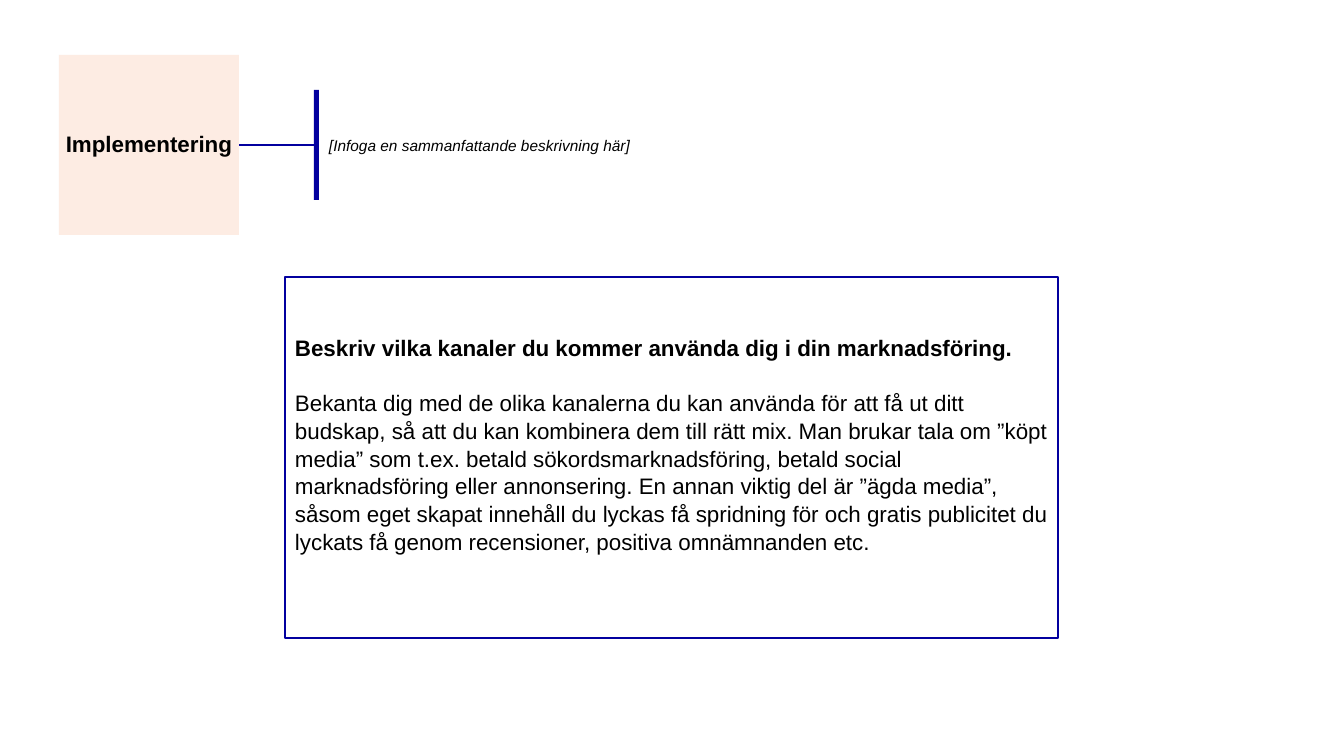
import pptx
import pptx.util
import pptx.oxml
from pptx.dml.color import RGBColor
from pptx.enum.shapes import MSO_CONNECTOR, MSO_SHAPE
from pptx.enum.text import MSO_ANCHOR, PP_ALIGN

NAVY = RGBColor(0x03, 0x00, 0x9F)
PEACH = RGBColor(0xFD, 0xEC, 0xE3)
BLACK = RGBColor(0, 0, 0)

INSET = 10
LINE_HEIGHT = 27

HEADING = "Beskriv vilka kanaler du kommer använda dig i din marknadsföring."
BODY = (
    "Bekanta dig med de olika kanalerna du kan använda för att få ut ditt budskap, "
    "så att du kan kombinera dem till rätt mix. Man brukar tala om ”köpt media” som "
    "t.ex. betald sökordsmarknadsföring, betald social marknadsföring eller "
    "annonsering. En annan viktig del är ”ägda media”, såsom eget skapat innehåll du "
    "lyckas få spridning för och gratis publicitet du lyckats få genom recensioner, "
    "positiva omnämnanden etc."
)


def px(n):
    """Convert slide pixels (1344 across 13.33 inches) to EMU."""
    return pptx.util.Emu(round(n * 914400 / 100.8))


def add_rect(slide, x, y, w, h, fill=None, line=None):
    sp = slide.shapes.add_shape(MSO_SHAPE.RECTANGLE, px(x), px(y), px(w), px(h))
    sp.shadow.inherit = False
    if fill is None:
        sp.fill.background()
    else:
        sp.fill.solid()
        sp.fill.fore_color.rgb = fill
    if line is None:
        sp.line.fill.background()
    else:
        sp.line.color.rgb = line
        sp.line.width = pptx.util.Pt(1)
    return sp


def set_frame(sp, left=INSET, right=INSET, top=5, bottom=5):
    tf = sp.text_frame
    tf.word_wrap = True
    tf.vertical_anchor = MSO_ANCHOR.MIDDLE
    tf.margin_left, tf.margin_right = px(left), px(right)
    tf.margin_top, tf.margin_bottom = px(top), px(bottom)
    return tf


def write(p, text, size=16, bold=False, italic=False, align=PP_ALIGN.LEFT,
          spacing=1.0, after=0):
    p.alignment = align
    p.line_spacing = spacing
    p.space_after = px(after)
    r = p.add_run()
    r.text = text
    r.font.name = "Arial"
    r.font.size = pptx.util.Pt(size)
    r.font.bold = bold
    r.font.italic = italic
    r.font.color.rgb = BLACK


def add_header(slide, x, y, side):
    """Draw the square label, its connector, the bar and the summary."""
    middle = y + side / 2
    bar_x, bar_w, bar_h = x + side + 75, 5, 110

    label = add_rect(slide, x, y, side, side, fill=PEACH)
    tf = set_frame(label, left=0, right=0)
    write(tf.paragraphs[0], "Implementering", bold=True,
          align=PP_ALIGN.CENTER, spacing=0.9)

    line = slide.shapes.add_connector(
        MSO_CONNECTOR.STRAIGHT, px(bar_x), px(middle), px(x + side), px(middle))
    line.line.color.rgb = NAVY
    line.line.width = pptx.util.Pt(1)
    line.element.spPr.append(pptx.oxml.parse_xml(
        '<a:effectLst xmlns:a="http://schemas.openxmlformats.org/drawingml/2006/main"/>'))

    add_rect(slide, bar_x, middle - bar_h / 2, bar_w, bar_h, fill=NAVY)

    text_h = 29
    summary = slide.shapes.add_textbox(
        px(bar_x + bar_w), px(middle - text_h / 2), px(383), px(text_h))
    write(set_frame(summary).paragraphs[0],
          "[Infoga en sammanfattande beskrivning här]", size=11, italic=True)


def add_description(slide, x, y, w, h):
    box = add_rect(slide, x, y, w, h, line=NAVY)
    tf = set_frame(box, bottom=5 + LINE_HEIGHT)
    write(tf.paragraphs[0], HEADING, bold=True, spacing=1.04, after=LINE_HEIGHT)
    write(tf.add_paragraph(), BODY, spacing=1.04)


def main():
    prs = pptx.Presentation()
    prs.slide_width, prs.slide_height = px(1344), px(756)
    slide = prs.slides.add_slide(prs.slide_layouts[6])
    add_description(slide, 285, 277, 773, 361)
    add_header(slide, 59, 55, 180)
    prs.save("out.pptx")


if __name__ == "__main__":
    main()
